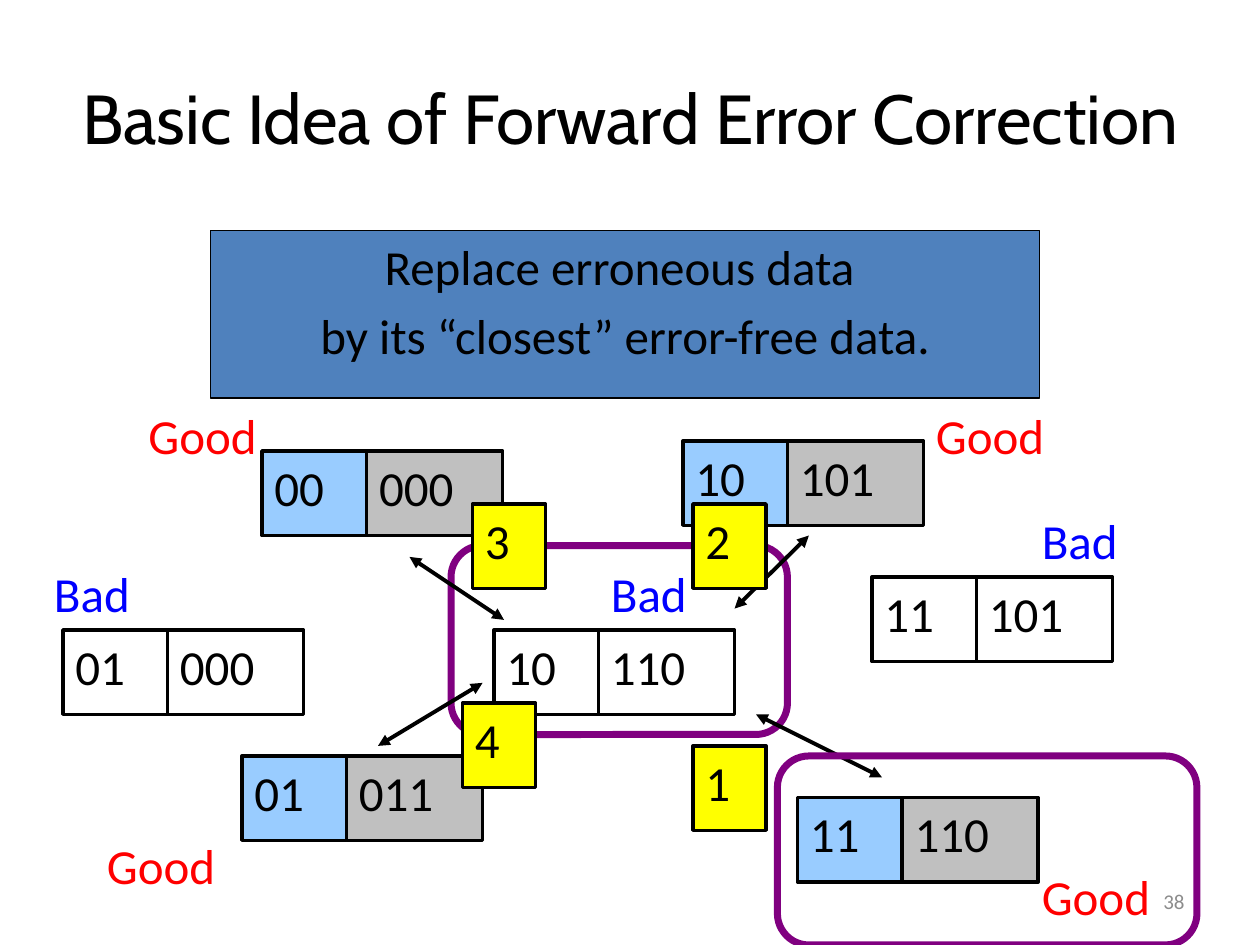
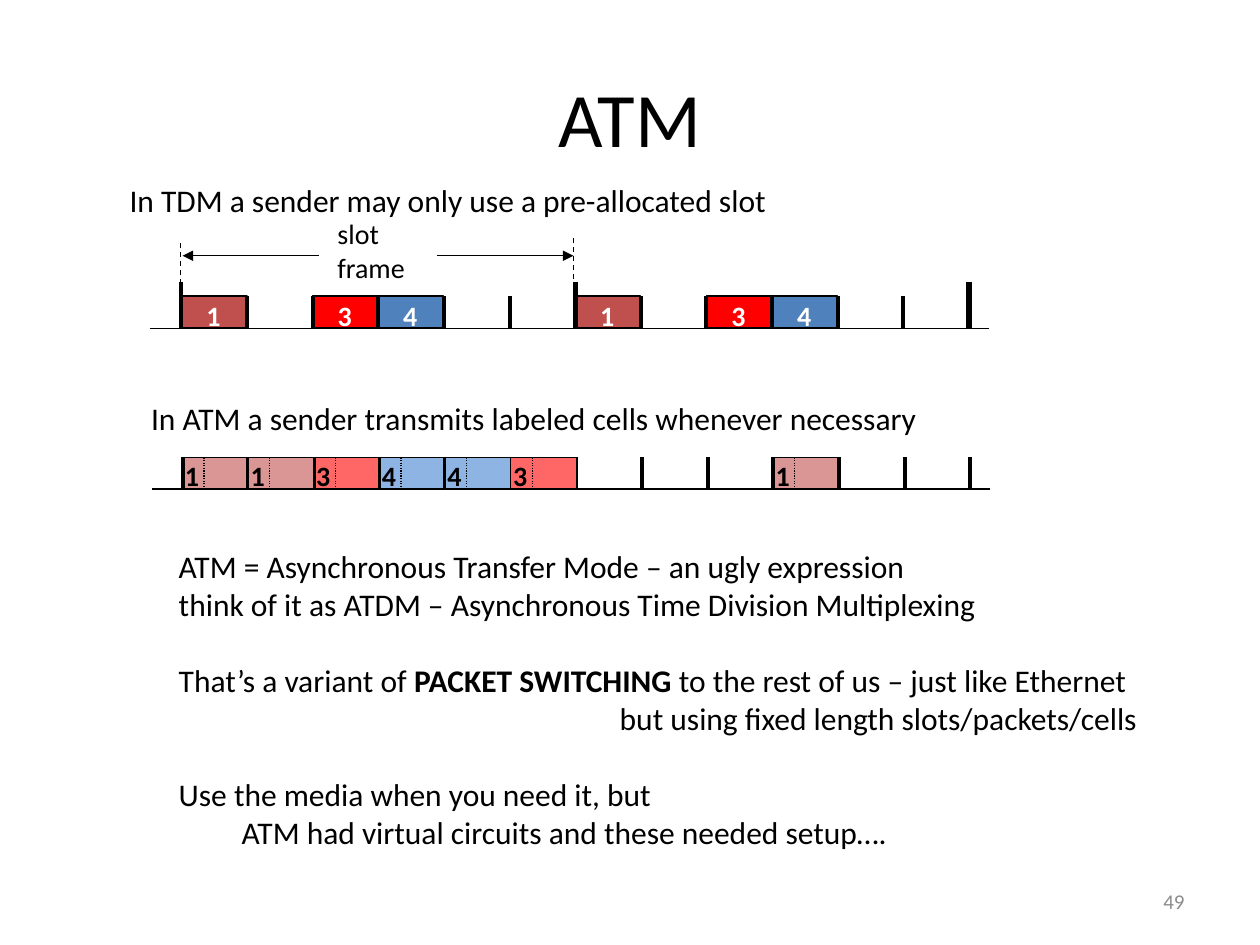
from lxml.etree import SubElement
from pptx import Presentation
from pptx.dml.color import RGBColor
from pptx.enum.dml import MSO_LINE
from pptx.enum.shapes import MSO_CONNECTOR, MSO_SHAPE
from pptx.enum.text import MSO_ANCHOR, MSO_AUTO_SIZE, PP_ALIGN
from pptx.oxml.ns import qn
from pptx.util import Inches, Pt

# Shared look
FONT = "Calibri"
BLACK = RGBColor(0x00, 0x00, 0x00)
WHITE = RGBColor(0xFF, 0xFF, 0xFF)
GREY_TEXT = RGBColor(0x8C, 0x8C, 0x8C)
BLUE = RGBColor(0x4F, 0x81, 0xBD)
BRICK = RGBColor(0xC0, 0x50, 0x4D)
RED = RGBColor(0xFF, 0x00, 0x00)
PURE_BLUE = RGBColor(0x00, 0x00, 0xFF)
YELLOW = RGBColor(0xFF, 0xFF, 0x00)
PURPLE = RGBColor(0x80, 0x00, 0x80)
DATA_BLUE = RGBColor(0x99, 0xCC, 0xFF)
CHECK_GREY = RGBColor(0xC0, 0xC0, 0xC0)
PALE_BRICK = RGBColor(0xD9, 0x96, 0x94)
PALE_RED = RGBColor(0xFF, 0x66, 0x66)
PALE_BLUE = RGBColor(0x8E, 0xB4, 0xE3)

TDM_COLOURS = {"1": BRICK, "3": RED, "4": BLUE}
ATM_COLOURS = {"1": PALE_BRICK, "3": PALE_RED, "4": PALE_BLUE}
SLOT_COUNT = 12
SLOT_PITCH = 6.25 / SLOT_COUNT
SLOTS_PER_FRAME = 6


def format_text(frame, size, colour=BLACK, bold=None, align=None, font=FONT):
    for para in frame.paragraphs:
        para.alignment = align
        for span in para.runs:
            span.font.name = font
            span.font.size = Pt(size)
            span.font.bold = bold
            span.font.color.rgb = colour


def set_indent(para, left, first=0):
    properties = para._p.get_or_add_pPr()
    properties.set("marL", str(Inches(left)))
    properties.set("indent", str(Inches(first)))


def hang(frame, indent):
    """Hanging indent and a gap of a fifth of the 28 pt text."""
    for para in frame.paragraphs:
        set_indent(para, indent, -indent)
        para.space_before = Pt(5.6)


def add_page(deck, title, size, number, font=FONT):
    page = deck.slides.add_slide(deck.slide_layouts[5])
    heading = page.shapes.title
    heading.left, heading.top = Inches(0.5), Inches(0.3)
    heading.width, heading.height = Inches(9), Inches(1.25)
    frame = heading.text_frame
    frame.text = title
    frame.auto_size = MSO_AUTO_SIZE.NONE
    frame.vertical_anchor = MSO_ANCHOR.MIDDLE
    format_text(frame, size, align=PP_ALIGN.CENTER, font=font)
    footer = add_text(page, str(number), 7.17, 6.95, 2.33, 0.4, 12,
                      GREY_TEXT, align=PP_ALIGN.RIGHT)
    footer.vertical_anchor = MSO_ANCHOR.MIDDLE
    return page


def add_text(page, text, left, top, width, height, size, colour=BLACK,
             bold=None, align=PP_ALIGN.LEFT, wrap=True):
    box = page.shapes.add_textbox(Inches(left), Inches(top),
                                  Inches(width), Inches(height))
    frame = box.text_frame
    frame.word_wrap = wrap
    if not wrap:
        frame.auto_size = MSO_AUTO_SIZE.SHAPE_TO_FIT_TEXT
    frame.text = text
    format_text(frame, size, colour, bold, align)
    return frame


def add_box(page, left, top, width, height, fill=None, line=BLACK, weight=0.75,
            kind=MSO_SHAPE.RECTANGLE):
    box = page.shapes.add_shape(kind, Inches(left), Inches(top),
                                Inches(width), Inches(height))
    box.shadow.inherit = False
    if fill is None:
        box.fill.background()
    else:
        box.fill.solid()
        box.fill.fore_color.rgb = fill
    box.line.color.rgb = line
    box.line.width = Pt(weight)
    box.text_frame.vertical_anchor = MSO_ANCHOR.TOP
    return box


def add_line(page, start, end, weight=0.75, dash=None, arrows=()):
    line = page.shapes.add_connector(
        MSO_CONNECTOR.STRAIGHT, *(Inches(value) for value in (*start, *end)))
    line.line.color.rgb = BLACK
    line.line.width = Pt(weight)
    if dash is not None:
        line.line.dash_style = dash
    properties = line._element.spPr
    outline = properties.find(qn("a:ln"))
    for arrow in arrows:
        SubElement(outline, qn("a:" + arrow), type="triangle")
    SubElement(properties, qn("a:effectLst"))


# Code words of the error correction slide
def add_bits(page, text, left, top, width, fill):
    frame = add_box(page, left, top, width, 0.67, fill, weight=2).text_frame
    frame.text = text
    format_text(frame, 28, align=PP_ALIGN.LEFT)
    hang(frame, 0.58)


def add_code_word(page, data, check, left, top, valid):
    add_bits(page, data, left, top, 0.83, DATA_BLUE if valid else None)
    add_bits(page, check, left + 0.83, top, 1.08, CHECK_GREY if valid else None)


def add_verdict(page, left, top, valid):
    frame = add_text(page, "Good" if valid else "Bad", left, top, 1.42, 0.67,
                     28, RED if valid else PURE_BLUE)
    hang(frame, 0.58)


def build_error_correction(deck):
    page = add_page(deck, "Basic Idea of Forward Error Correction", 39.6, 38,
                    font="Cabin")

    # Main statement
    frame = add_box(page, 1.67, 1.83, 6.58, 1.33, BLUE).text_frame
    frame.text = ("Replace erroneous data \n"
                  "by its “closest” error-free data.")
    format_text(frame, 28, align=PP_ALIGN.CENTER)
    hang(frame, 0.38)

    # Code words: data, check bits, position, validity
    for word in (("00", "000", 2.08, 3.58, True),
                 ("01", "011", 1.92, 6, True),
                 ("10", "101", 5.42, 3.5, True),
                 ("11", "110", 6.33, 6.33, True),
                 ("01", "000", 0.5, 5, False),
                 ("11", "101", 6.92, 4.58, False),
                 ("10", "110", 3.92, 5, False)):
        add_code_word(page, *word)
    for verdict in ((7.33, 3.17, True), (0.75, 6.58, True),
                    (8.17, 6.83, True), (1.08, 3.17, True),
                    (8.17, 4, False), (0.33, 4.42, False),
                    (4.75, 4.42, False)):
        add_verdict(page, *verdict)

    # Received word, its distances, and the closest valid word
    rounded = MSO_SHAPE.ROUNDED_RECTANGLE
    add_box(page, 3.58, 4.33, 2.67, 1.5, line=PURPLE, weight=4, kind=rounded)
    for start, end in (((5.83, 4.83), (6.42, 4.25)),
                       ((3.25, 4.42), (4, 4.92)),
                       ((6, 5.67), (7, 6.17)),
                       ((3, 5.92), (3.83, 5.42))):
        add_line(page, start, end, 2.25, arrows=("headEnd", "tailEnd"))
    for distance, left, top in (("3", 3.75, 4), ("4", 3.67, 5.58),
                                ("2", 5.5, 4), ("1", 5.5, 5.92)):
        add_bits(page, distance, left, top, 0.58, YELLOW)
    add_box(page, 6.17, 6, 3.33, 1.5, line=PURPLE, weight=4, kind=rounded)


# Time lines of the ATM slide
def slot_left(start, slot):
    return start + slot * SLOT_PITCH


def add_cell(page, left, top, fill):
    add_box(page, left, top, 0.52, 0.25, fill)


def add_digit(page, digit, left, top, colour):
    add_text(page, digit, left, top, 0.33, 0.37, 16, colour, True, wrap=False)


def add_tdm_line(page):
    start, top, base = 1.44, 2.35, 2.61
    add_line(page, (1.19, base), (7.85, base))
    for slot, sender in ((0, "1"), (2, "3"), (3, "4"),
                         (6, "1"), (8, "3"), (9, "4")):
        left = slot_left(start, slot)
        add_cell(page, left, top, TDM_COLOURS[sender])
        add_digit(page, sender, left + 0.1, 2.32, WHITE)
    for slot in range(SLOT_COUNT + 1):
        left = slot_left(start, slot)
        frame_edge = slot % SLOTS_PER_FRAME == 0
        add_line(page, (left, 2.24 if frame_edge else top), (left, base),
                 3 if frame_edge and slot else 2.25)

    # Frame length
    add_text(page, "slot\nframe", 2.58, 1.67, 0.78, 0.64, 16, wrap=False)
    add_line(page, (3.47, 2.03), (4.55, 2.03), arrows=("tailEnd",))
    add_line(page, (2.53, 2.03), (1.45, 2.03), arrows=("tailEnd",))
    for left, upper in ((1.43, 1.93), (4.55, 1.89)):
        add_line(page, (left, upper), (left, upper + 0.34), dash=MSO_LINE.DASH)


def add_labeled_cell(page, start, top, slot, sender):
    left = slot_left(start, slot)
    add_cell(page, left, top, ATM_COLOURS[sender])
    add_digit(page, sender, left - 0.08, top - 0.04, BLACK)
    add_line(page, (left + 0.17, top), (left + 0.17, top + 0.26),
             dash=MSO_LINE.ROUND_DOT)


def add_atm_line(page):
    start, top, base = 1.45, 3.63, 3.88
    add_line(page, (1.21, base), (7.86, base))
    for slot, sender in ((0, "1"), (2, "3"), (3, "4"), (9, "1")):
        add_labeled_cell(page, start, top, slot, sender)
    for slot in range(SLOT_COUNT + 1):
        left = slot_left(start, slot)
        add_line(page, (left, top), (left, base), 2.25)
    # These cells cover the slot marks
    for slot, sender in ((1, "1"), (4, "4"), (5, "3")):
        add_labeled_cell(page, start, top, slot, sender)


def add_remarks(page):
    remarks = (  # text, left indent, starts a new group
        ("ATM = Asynchronous Transfer Mode – an ugly expression", 0, False),
        ("think of it as ATDM – Asynchronous Time Division Multiplexing",
         0, False),
        ("That’s a variant of ", 0, True),
        ("but using fixed length slots/packets/cells", 3.5, False),
        ("Use the media when you need it, but", 0, True),
        ("ATM had virtual circuits and these needed setup….", 0.5, False))
    frame = add_text(page, "\n".join(text for text, _, _ in remarks),
                     1.32, 4.29, 8.59, 2.83, 18)
    for para, (_, left, new_group) in zip(frame.paragraphs, remarks):
        set_indent(para, left)
        if new_group:
            para.space_before = Pt(22)
    variant = frame.paragraphs[2]
    for text in ("PACKET SWITCHING",
                 " to the rest of us – just like Ethernet"):
        variant.add_run().text = text
    format_text(frame, 18, align=PP_ALIGN.LEFT)
    variant.runs[1].font.bold = True


def build_atm(deck):
    page = add_page(deck, "ATM", 44, 49)
    add_tdm_line(page)
    add_atm_line(page)
    add_remarks(page)
    add_text(page, "In TDM a sender may only use a pre-allocated slot",
             0.93, 1.39, 6.13, 0.4, 18)
    add_text(page, "In ATM a sender transmits labeled cells whenever necessary",
             1.1, 3.12, 6.59, 0.4, 18)


def main():
    deck = Presentation()
    deck.slide_width, deck.slide_height = Inches(10), Inches(7.5)
    build_error_correction(deck)
    build_atm(deck)
    deck.save("out.pptx")


main()
